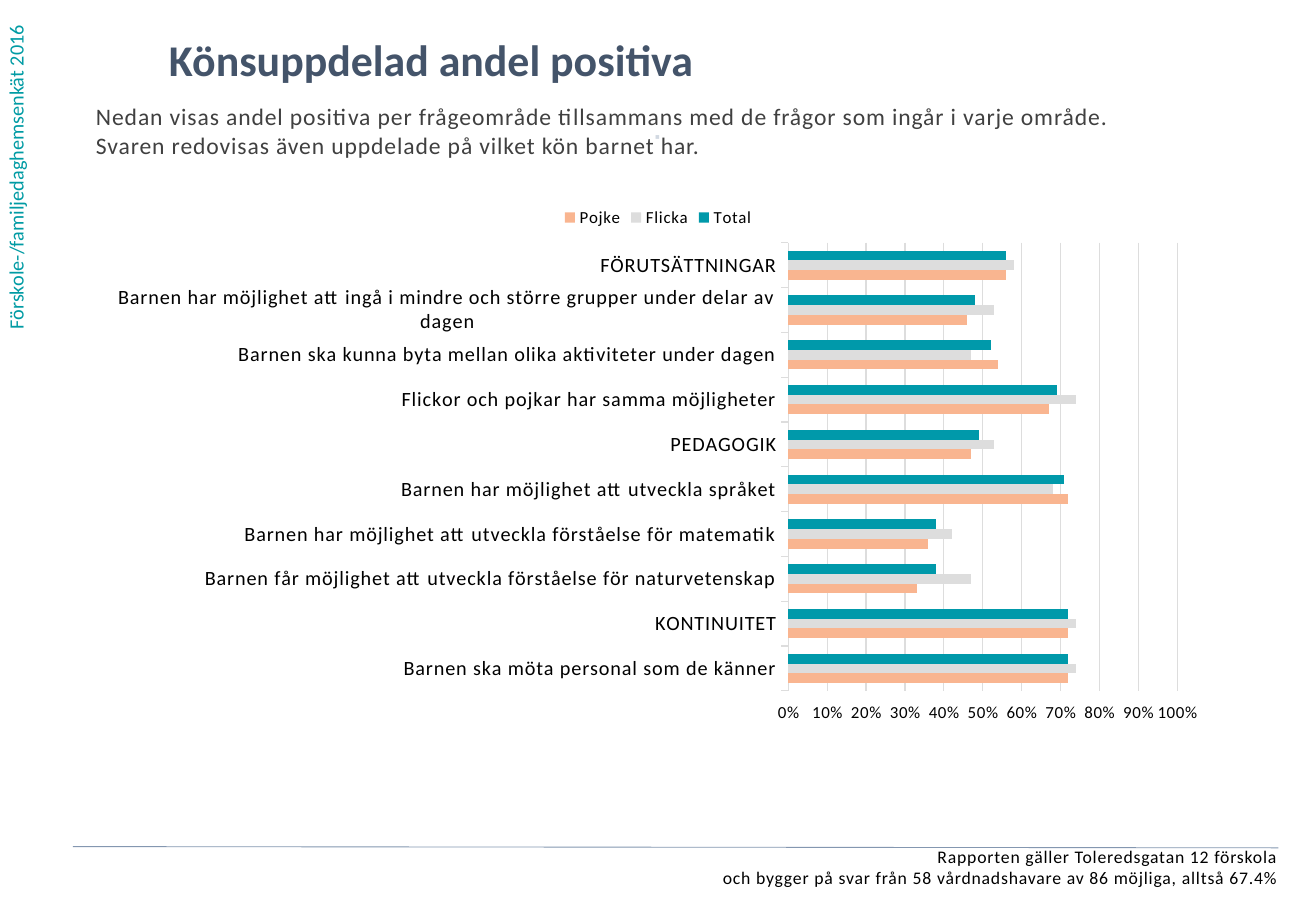
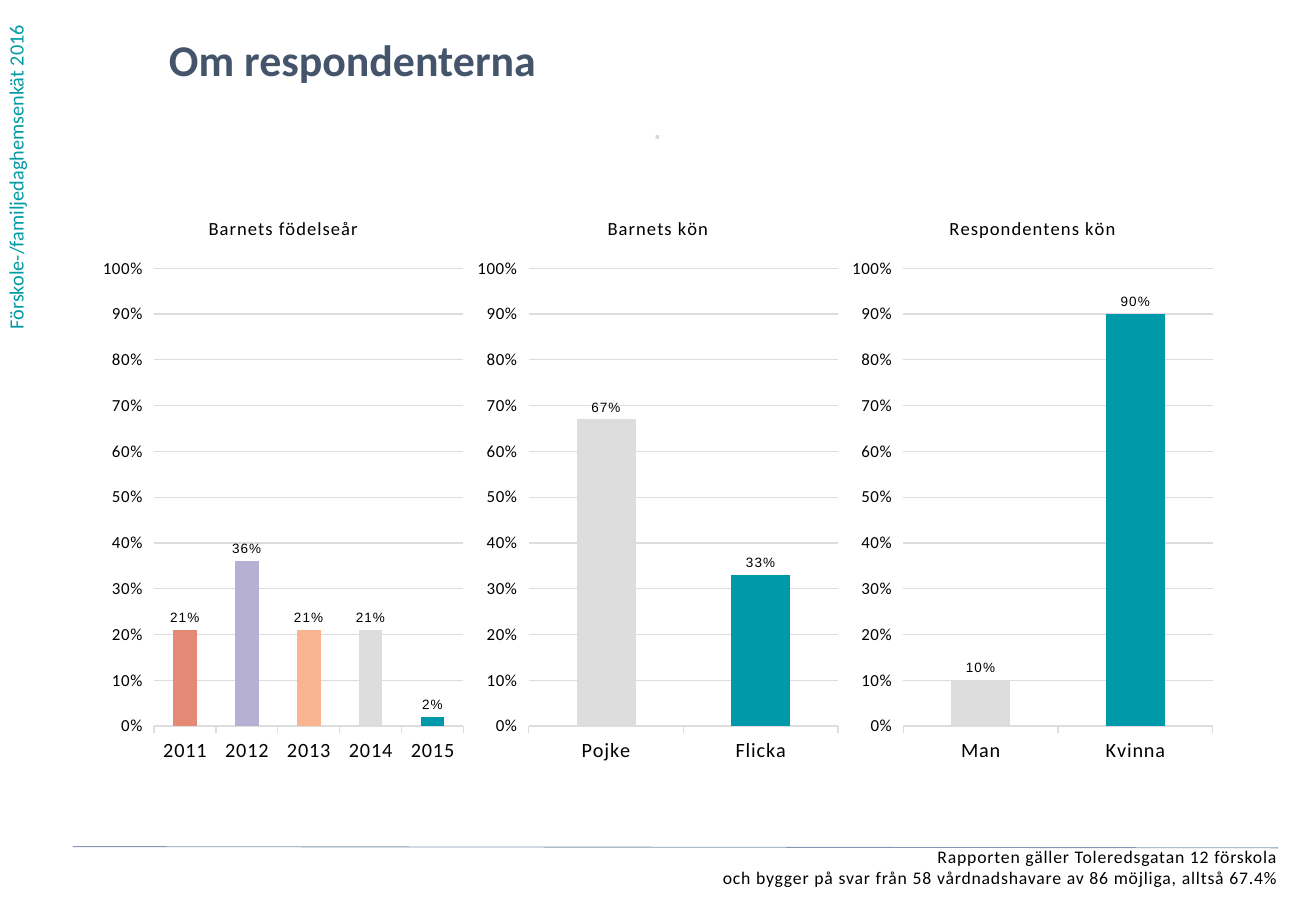
import dataclasses
import typing

import lxml.etree
import pptx
import pptx.chart.chart
import pptx.chart.data
import pptx.dml.color
import pptx.enum.chart
import pptx.enum.shapes
import pptx.enum.text
import pptx.oxml.ns
import pptx.slide
import pptx.util

Inches = pptx.util.Inches
Pt = pptx.util.Pt
RGBColor = pptx.dml.color.RGBColor
Align = pptx.enum.text.PP_ALIGN
Kind = pptx.enum.chart.XL_CHART_TYPE
qn = pptx.oxml.ns.qn

TEAL = RGBColor(0x00, 0x99, 0xAA)
SIDE = RGBColor(0x00, 0x9B, 0xA4)
GRAY = RGBColor(0xDD, 0xDD, 0xDD)
PEACH = RGBColor(0xF9, 0xB5, 0x90)
LILAC = RGBColor(0xB6, 0xB1, 0xD4)
CORAL = RGBColor(0xE5, 0x89, 0x77)
NAVY = RGBColor(0x44, 0x54, 0x6A)
DARK = RGBColor(0x40, 0x40, 0x40)
PALE = RGBColor(0xD2, 0xD9, 0xE2)
BLUE = RGBColor(0x84, 0x97, 0xB0)
BLACK = RGBColor(0, 0, 0)

FONT = "Calibri"
RATE = "0%;0%"
LEFT, TOP = 0.79, 1.6
WIDE = 9.25
STEP = WIDE / 3


class Box(typing.NamedTuple):
    left: float
    top: float
    width: float
    height: float


@dataclasses.dataclass(frozen=True)
class Label:
    box: Box
    lines: tuple[str, ...]
    size: float
    color: RGBColor
    bold: bool = False
    space: int = 0
    align: Align = Align.LEFT
    turn: bool = False


@dataclasses.dataclass(frozen=True)
class Series:
    name: str
    vals: tuple[float, ...]
    color: RGBColor


@dataclasses.dataclass(frozen=True)
class Poll:
    title: str
    cats: tuple[str, ...]
    vals: tuple[float, ...]


SHARED = (
    Label(Box(-0.02, 0, 0.4, 2.81), ("Förskole-/familjedaghemsenkät 2016",),
          12, SIDE, turn=True),
    Label(Box(0.12, 6.96, 10.4, 0.43),
          ("Rapporten gäller Toleredsgatan 12 förskola",
           "och bygger på svar från 58 vårdnadshavare av 86 möjliga, alltså 67.4%"),
          10.5, BLACK, space=50, align=Align.RIGHT),
    Label(Box(3.87, 1.02, 3.08, 0.39), ("⋅",), 12, PALE, True, 50, Align.CENTER),
)
INTRO = Label(
    Box(LEFT, 0.84, 9.46, 1.01),
    ("Nedan visas andel positiva per frågeområde tillsammans med de frågor som ingår i varje område. ",
     "Svaren redovisas även uppdelade på vilket kön barnet har."),
    14, DARK, space=50)

AREAS = (
    "FÖRUTSÄTTNINGAR",
    "Barnen har möjlighet att ingå i mindre och större grupper under delar av dagen",
    "Barnen ska kunna byta mellan olika aktiviteter under dagen",
    "Flickor och pojkar har samma möjligheter",
    "PEDAGOGIK",
    "Barnen har möjlighet att utveckla språket",
    "Barnen har möjlighet att utveckla förståelse för matematik",
    "Barnen får möjlighet att utveckla förståelse för naturvetenskap",
    "KONTINUITET",
    "Barnen ska möta personal som de känner",
)
GROUPS = (
    Series("Total", (0.56, 0.48, 0.52, 0.69, 0.49, 0.71, 0.38, 0.38, 0.72, 0.72), TEAL),
    Series("Flicka", (0.58, 0.53, 0.47, 0.74, 0.53, 0.68, 0.42, 0.47, 0.74, 0.74), GRAY),
    Series("Pojke", (0.56, 0.46, 0.54, 0.67, 0.47, 0.72, 0.36, 0.33, 0.72, 0.72), PEACH),
)
POLLS = (
    Poll("Barnets födelseår", ("2015", "2014", "2013", "2012", "2011"),
         (0.02, 0.21, 0.21, 0.36, 0.21)),
    Poll("Barnets kön", ("Flicka", "Pojke"), (0.33, 0.67)),
    Poll("Respondentens kön", ("Kvinna", "Man"), (0.9, 0.1)),
)
HUES = (TEAL, GRAY, PEACH, LILAC, CORAL)


def place(box: Box) -> tuple[int, ...]:
    return tuple(Inches(side) for side in box)


def style(font, size: float, color: RGBColor = BLACK, bold: bool = False,
          face: str = FONT) -> None:
    font.name = face
    font.size = Pt(size)
    font.bold = bold
    font.color.rgb = color


def write(slide: pptx.slide.Slide, label: Label) -> None:
    frame = slide.shapes.add_textbox(*place(label.box)).text_frame
    frame.word_wrap = True
    if label.turn:
        frame._txBody.bodyPr.set("vert", "vert270")
    else:
        frame.margin_left = frame.margin_right = Inches(0)
        frame.margin_top = frame.margin_bottom = Inches(0)
    para = frame.paragraphs[0]
    para.alignment = label.align
    for index, line in enumerate(label.lines):
        if index:
            para.add_line_break()
        run = para.add_run()
        run.text = line
        style(run.font, label.size, label.color, label.bold)
        if label.space:
            run._r.get_or_add_rPr().set("spc", str(label.space))


def rule(slide: pptx.slide.Slide) -> None:
    line = slide.shapes.add_connector(
        pptx.enum.shapes.MSO_CONNECTOR.STRAIGHT,
        Inches(0.6), Inches(6.97), Inches(10.52), Inches(6.98))
    line.line.color.rgb = BLUE
    line.line.width = Pt(0.5)
    lxml.etree.SubElement(line._element.spPr, qn("a:effectLst"))


def start(deck, title: str) -> pptx.slide.Slide:
    slide = deck.slides.add_slide(deck.slide_layouts[6])
    write(slide, Label(Box(1.39, 0.27, 8.34, 0.57), (title,), 26, NAVY, True))
    for label in SHARED:
        write(slide, label)
    rule(slide)
    return slide


def fit(chart: pptx.chart.chart.Chart, plot: Box) -> None:
    area = chart.element.find(".//" + qn("c:plotArea"))
    for old in area.findall(qn("c:layout")):
        area.remove(old)
    layout = lxml.etree.Element(qn("c:layout"))
    area.insert(0, layout)
    manual = lxml.etree.SubElement(layout, qn("c:manualLayout"))
    parts = [("layoutTarget", "inner"), ("xMode", "edge"), ("yMode", "edge")]
    parts += zip("xywh", plot)
    for tag, val in parts:
        lxml.etree.SubElement(manual, qn("c:" + tag)).set("val", str(val))


def space(chart: pptx.chart.chart.Chart) -> None:
    for tag in ("a:defRPr", "a:rPr"):
        for prop in chart.element.iter(qn(tag)):
            if not any(up.tag == qn("c:valAx") for up in prop.iterancestors()):
                prop.set("spc", "50")


def graph(slide: pptx.slide.Slide, kind: Kind, box: Box, plot: Box,
          cats: tuple[str, ...], groups: tuple[Series, ...]) -> pptx.chart.chart.Chart:
    data = pptx.chart.data.CategoryChartData(number_format="0%")
    data.categories = cats
    for group in groups:
        data.add_series(group.name, group.vals)
    chart = slide.shapes.add_chart(kind, *place(box), data).chart
    style(chart.font, 10)
    chart.has_legend = False
    chart.has_title = False

    cross = chart.category_axis
    cross.reverse_order = True
    cross.has_major_gridlines = False
    cross.format.line.color.rgb = GRAY
    cross.format.line.width = Pt(0.75)
    style(cross.tick_labels.font, 12)

    scale = chart.value_axis
    scale.minimum_scale, scale.maximum_scale, scale.major_unit = 0, 1, 0.1
    scale.tick_label_position = pptx.enum.chart.XL_TICK_LABEL_POSITION.HIGH
    scale.format.line.fill.background()
    scale.has_major_gridlines = True
    scale.major_gridlines.format.line.color.rgb = GRAY
    scale.major_gridlines.format.line.width = Pt(0.75)
    scale.tick_labels.number_format = RATE
    scale.tick_labels.number_format_is_linked = False
    style(scale.tick_labels.font, 10)

    bars = chart.plots[0]
    bars.gap_width = 162
    bars.overlap = 0
    bars.vary_by_categories = False
    for item, group in zip(bars.series, groups):
        item.format.fill.solid()
        item.format.fill.fore_color.rgb = group.color
        item.invert_if_negative = False
    fit(chart, plot)
    return chart


def split(slide: pptx.slide.Slide) -> None:
    chart = graph(slide, Kind.BAR_CLUSTERED, Box(LEFT, TOP, WIDE, 4.43),
                  Box(0.616, 0.09, 0.346, 0.833), AREAS, GROUPS)
    chart.has_legend = True
    chart.legend.position = pptx.enum.chart.XL_LEGEND_POSITION.TOP
    chart.legend.include_in_layout = False
    style(chart.legend.font, 10)
    space(chart)


def survey(slide: pptx.slide.Slide, poll: Poll, left: float) -> None:
    chart = graph(slide, Kind.COLUMN_CLUSTERED, Box(left, TOP, STEP, 4.76),
                  Box(0.155, 0.128, 0.826, 0.792), poll.cats,
                  (Series("Series 1", poll.vals, TEAL),))
    chart.has_title = True
    chart.chart_title.include_in_layout = False
    run = chart.chart_title.text_frame.paragraphs[0].add_run()
    run.text = poll.title
    style(run.font, 11)

    item = chart.plots[0].series[0]
    for index, hue in zip(range(len(poll.vals)), HUES):
        fill = item.points[index].format.fill
        fill.solid()
        fill.fore_color.rgb = hue
    marks = item.data_labels
    marks.show_value = True
    marks.number_format = RATE
    marks.number_format_is_linked = False
    marks.position = pptx.enum.chart.XL_LABEL_POSITION.OUTSIDE_END
    style(marks.font, 8, face="Arial")
    space(chart)


def main() -> None:
    deck = pptx.Presentation()
    deck.slide_width = Inches(10.83)
    deck.slide_height = Inches(7.5)

    slide = start(deck, "Könsuppdelad andel positiva")
    write(slide, INTRO)
    split(slide)

    slide = start(deck, "Om respondenterna")
    for index, poll in enumerate(POLLS):
        survey(slide, poll, LEFT + index * STEP)

    deck.save("out.pptx")


if __name__ == "__main__":
    main()
